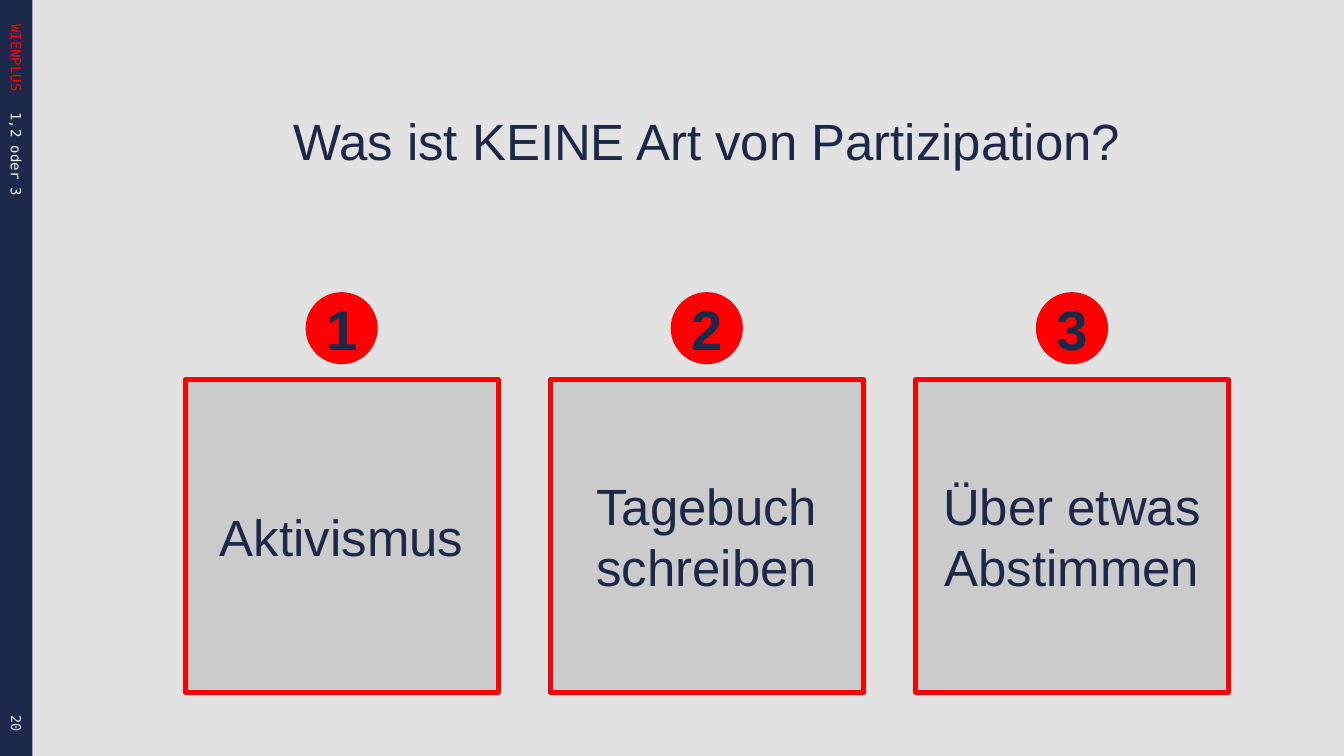
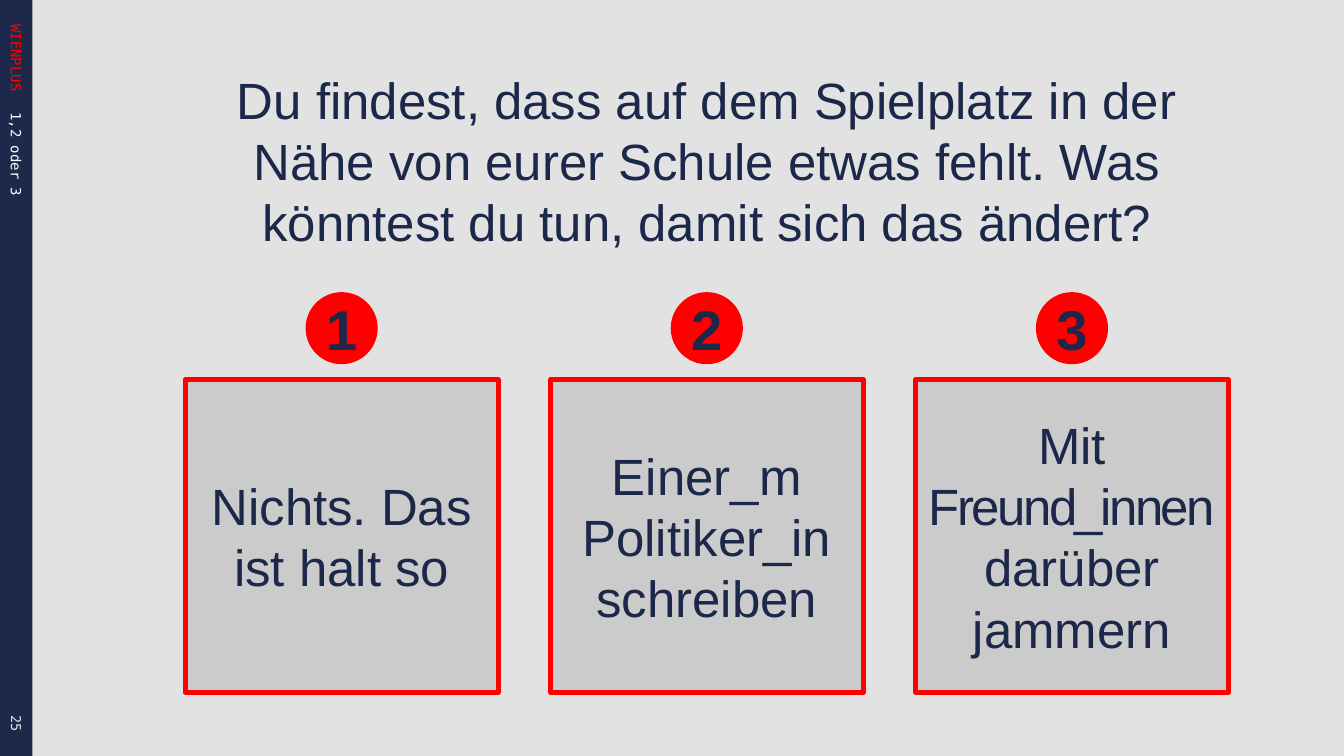
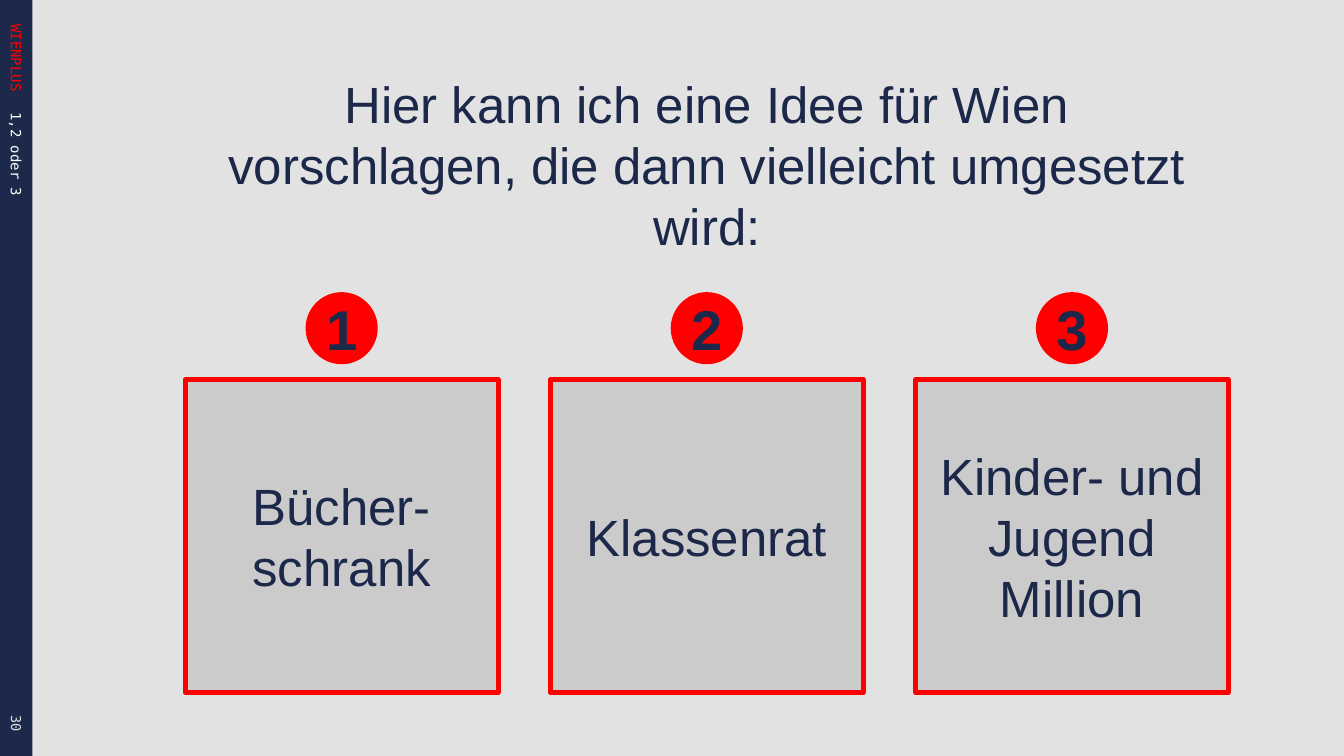
from pptx import Presentation
from pptx.dml.color import RGBColor
from pptx.enum.shapes import MSO_SHAPE
from pptx.enum.text import MSO_ANCHOR, PP_ALIGN
from pptx.util import Inches, Pt


def rgb(code):
    """Turn a hex string into a colour."""
    return RGBColor.from_string(code)


class Deck:
    """Quiz style and current slide; lengths are percent of the slide's size."""

    NAVY, INK, RED = "1C294A", "1C2849", "FF0000"
    PAPER, CARD, WHITE = "E2E2E2", "CBCBCB", "FFFFFF"
    SANS, MONO = "Arial", "DejaVu Sans Mono"
    CARD_X, CARD_Y, CARD_W, CARD_H, PITCH = 13.78, 50.2, 23.28, 41.39, 27.17
    DISC_Y, DISC_W, DISC_H = 38.64, 5.37, 9.54

    def __init__(self):
        """Open an empty deck."""
        self.prs = Presentation()
        self.prs.slide_width = Inches(21.99)
        self.prs.slide_height = Inches(12.37)
        self.s = None

    def box(self, x, y, w, h):
        """Convert shares of the slide to lengths."""
        sw, sh = self.prs.slide_width, self.prs.slide_height
        return [int(v * full / 100) for v, full in ((x, sw), (y, sh), (w, sw), (h, sh))]

    def text(self, sp, runs, size, color, font=SANS, bold=False,
             align=PP_ALIGN.CENTER, anchor=MSO_ANCHOR.MIDDLE, inset=True):
        """Fill a shape with one paragraph of (text, spacing) runs."""
        tf = sp.text_frame
        tf.word_wrap = True
        tf.vertical_anchor = anchor
        if not inset:
            tf.margin_left = tf.margin_right = tf.margin_top = tf.margin_bottom = 0
        p = tf.paragraphs[0]
        p.alignment = align
        for words, spacing in runs:
            r = p.add_run()
            r.text = words
            r.font.name, r.font.size, r.font.bold = font, Pt(size), bold
            r.font.color.rgb = rgb(color)
            if spacing:
                r.font._element.set("spc", str(int(spacing * 100)))

    def shape(self, shapes, kind, place, fill, line=None):
        """Add a flat preset shape."""
        sp = shapes.add_shape(kind, *self.box(*place))
        sp.shadow.inherit = False
        sp.fill.solid()
        sp.fill.fore_color.rgb = rgb(fill)
        if line:
            sp.line.color.rgb = rgb(line)
            sp.line.width = Pt(6)
        else:
            sp.line.fill.background()
        return sp

    def side_text(self, y, h, words, color, size=16.5, align=PP_ALIGN.LEFT):
        """Add text that runs down the side band."""
        sp = self.s.shapes.add_textbox(*self.box(0.59, y, 1.27, h))
        self.text(sp, [(words, 0)], size, color, self.MONO, align=align, inset=False)
        sp.text_frame._txBody.bodyPr.set("vert", "vert")

    def slide(self, page):
        """Start a slide with its background and side band."""
        self.s = self.prs.slides.add_slide(self.prs.slide_layouts[6])
        self.s.background.fill.solid()
        self.s.background.fill.fore_color.rgb = rgb(self.PAPER)
        self.shape(self.s.shapes, MSO_SHAPE.RECTANGLE, (0, 0, 2.41, 100), self.NAVY)
        self.side_text(3.23, 9.7, "WIENPLUS", self.RED)
        self.side_text(14.87, 60, "1,2 oder 3", self.WHITE)
        self.side_text(87.71, 9.05, str(page), self.PAPER, 16, PP_ALIGN.RIGHT)

    def question(self, y, words):
        """Add the question at the top."""
        sp = self.s.shapes.add_textbox(*self.box(14.19, y, 76.81, 7.19))
        self.text(sp, [(words, 0)], 60, self.INK, anchor=MSO_ANCHOR.TOP)

    def answer(self, i, runs):
        """Add a numbered answer card in column i."""
        shapes = self.s.shapes.add_group_shape().shapes
        x = self.CARD_X + i * self.PITCH
        card = self.shape(shapes, MSO_SHAPE.RECTANGLE,
                          (x, self.CARD_Y, self.CARD_W, self.CARD_H), self.CARD, self.RED)
        self.text(card, runs, 60, self.INK)
        disc = self.shape(shapes, MSO_SHAPE.OVAL,
                          (x + (self.CARD_W - self.DISC_W) / 2, self.DISC_Y,
                           self.DISC_W, self.DISC_H), self.RED)
        self.text(disc, [(str(i + 1), -0.1)], 66, self.INK, bold=True, inset=False)


QUIZ = [
    (20, 14.07, "Was ist KEINE Art von Partizipation?",
     [[("Aktivismus", 0)], [("Tagebuch schreiben", 0)], [("Über etwas Abstimmen", 0)]]),
    (25, 8.65, "Du findest, dass auf dem Spielplatz in der Nähe von eurer Schule "
     "etwas fehlt. Was könntest du tun, damit sich das ändert?",
     [[("Nichts. Das ist halt so", 0)], [("Einer_m Politiker_in schreiben", 0)],
      [("Mit ", 0), ("Freund_innen", -3), (" darüber jammern", 0)]]),
    (30, 9.22, "Hier kann ich eine Idee für Wien vorschlagen, die dann vielleicht "
     "umgesetzt wird:",
     [[("Bücher-schrank", 0)], [("Klassenrat", 0)], [("Kinder- und Jugend Million", 0)]]),
]


def main():
    """Build the quiz slides."""
    deck = Deck()
    for page, y, question, answers in QUIZ:
        deck.slide(page)
        deck.question(y, question)
        for i, runs in enumerate(answers):
            deck.answer(i, runs)
    deck.prs.save("out.pptx")


if __name__ == "__main__":
    main()
